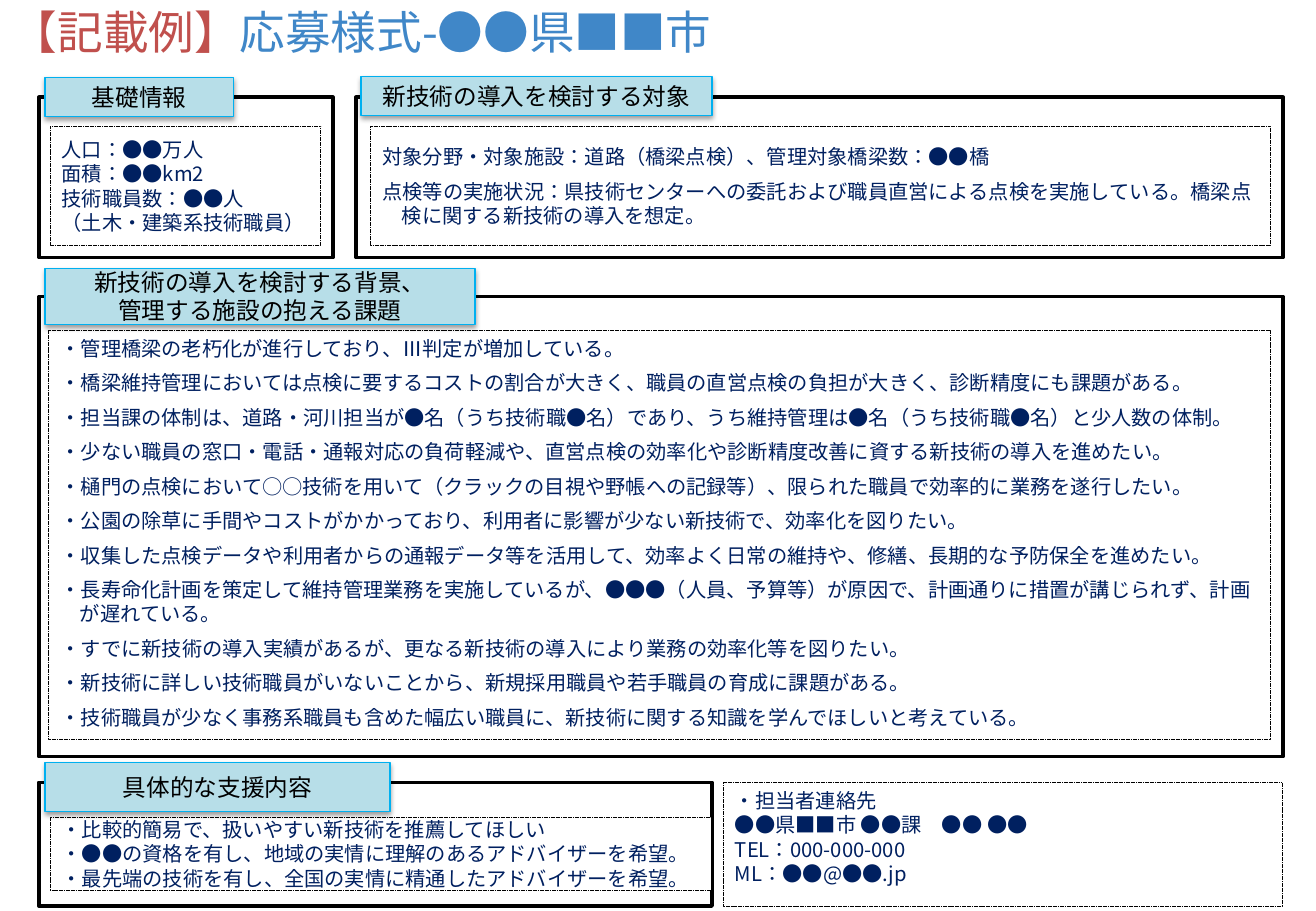
from lxml.etree import SubElement
from pptx import Presentation
from pptx.dml.color import RGBColor
from pptx.enum.dml import MSO_LINE
from pptx.enum.lang import MSO_LANGUAGE_ID as LANG
from pptx.enum.shapes import MSO_SHAPE as SHAPE
from pptx.enum.text import MSO_ANCHOR as ANCHOR, PP_ALIGN as ALIGN
from pptx.oxml.ns import qn
from pptx.util import Emu, Pt

PX = 9144  # EMU per px, 100 px to the inch
FONT = "Noto Sans CJK JP"
COLORS = {
    "black": "000000", "white": "FFFFFF", "tab": "B7DEE8", "tab_line": "00B0F0",
    "navy": "002060", "red": "C0504D", "blue": "4087C8",
}

BASICS = ["人口：●●万人", "面積：●●km2", "技術職員数：●●人", "（土木・建築系技術職員）"]
TARGETS = [
    "対象分野・対象施設：道路（橋梁点検）、管理対象橋梁数：●●橋",
    "点検等の実施状況：県技術センターへの委託および職員直営による点検を実施している。"
    "橋梁点検に関する新技術の導入を想定。",
]
ISSUES = [
    "・管理橋梁の老朽化が進行しており、Ⅲ判定が増加している。",
    "・橋梁維持管理においては点検に要するコストの割合が大きく、職員の直営点検の負担が大きく、診断精度にも課題がある。",
    "・担当課の体制は、道路・河川担当が●名（うち技術職●名）であり、うち維持管理は●名（うち技術職●名）と少人数の体制。",
    "・少ない職員の窓口・電話・通報対応の負荷軽減や、直営点検の効率化や診断精度改善に資する新技術の導入を進めたい。",
    "・樋門の点検において○○技術を用いて（クラックの目視や野帳への記録等）、限られた職員で効率的に業務を遂行したい。",
    "・公園の除草に手間やコストがかかっており、利用者に影響が少ない新技術で、効率化を図りたい。",
    "・収集した点検データや利用者からの通報データ等を活用して、効率よく日常の維持や、修繕、長期的な予防保全を進めたい。",
    "・長寿命化計画を策定して維持管理業務を実施しているが、●●●（人員、予算等）が原因で、"
    "計画通りに措置が講じられず、計画が遅れている。",
    "・すでに新技術の導入実績があるが、更なる新技術の導入により業務の効率化等を図りたい。",
    "・新技術に詳しい技術職員がいないことから、新規採用職員や若手職員の育成に課題がある。",
    "・技術職員が少なく事務系職員も含めた幅広い職員に、新技術に関する知識を学んでほしいと考えている。",
]
SUPPORT = [
    "・比較的簡易で、扱いやすい新技術を推薦してほしい",
    "・●●の資格を有し、地域の実情に理解のあるアドバイザーを希望。",
    "・最先端の技術を有し、全国の実情に精通したアドバイザーを希望。",
]
CONTACT = ["・担当者連絡先", "●●県■■市 ●●課　●● ●●", "TEL：000-000-000", "ML：●●@●●.jp"]


def px(n):
    return Emu(n * PX)


def rgb(name):
    return RGBColor.from_string(COLORS[name])


def add_run(p, text, size=12, color="navy"):
    r = p.add_run()
    r.text = text
    r.font.size = Pt(size)
    r.font.name = FONT
    r.font.color.rgb = rgb(color)
    r.font.language_id = LANG.JAPANESE
    SubElement(r.font._element, qn("a:ea")).set("typeface", FONT)


def write(sp, lines, align=ALIGN.LEFT, anchor=ANCHOR.MIDDLE, hang=0, before=0, **fmt):
    tf = sp.text_frame
    tf.word_wrap = True
    tf.vertical_anchor = anchor
    for i, line in enumerate(lines):
        p = tf.add_paragraph() if i else tf.paragraphs[0]
        p.alignment = align
        if i and before:
            p.space_before = Pt(before)
        if hang:
            pPr = p._p.get_or_add_pPr()
            pPr.set("marL", str(px(hang)))
            pPr.set("indent", str(-px(hang)))
        add_run(p, line, **fmt)


def add_rect(slide, box, line, width, fill=None):
    sp = slide.shapes.add_shape(SHAPE.RECTANGLE, *map(px, box))
    sp.shadow.inherit = False
    if fill:
        sp.fill.solid()
        sp.fill.fore_color.rgb = rgb(fill)
    else:
        sp.fill.background()
    sp.line.color.rgb = rgb(line)
    sp.line.width = Pt(width)
    return sp


def add_shadow(sp):
    effects = sp._element.spPr.find(qn("a:effectLst"))
    shadow = SubElement(effects, qn("a:outerShdw"), blurRad=str(Pt(3.1)),
                        dist=str(Pt(1.6)), dir="5400000", rotWithShape="0")
    color = SubElement(shadow, qn("a:srgbClr"), val=COLORS["black"])
    SubElement(color, qn("a:alpha"), val="38000")


def add_frame(slide, box):
    add_rect(slide, box, "black", 2)


def add_note(slide, box, lines, **fmt):
    sp = add_rect(slide, box, "black", 0.25, "white")
    sp.line.dash_style = MSO_LINE.SQUARE_DOT
    write(sp, lines, hang=16, **fmt)


def add_tab(slide, box, lines):
    sp = add_rect(slide, box, "tab_line", 0.75, "tab")
    add_shadow(sp)
    write(sp, lines, align=ALIGN.CENTER, size=14, color="black")


def add_title(slide, box, parts):
    sp = slide.shapes.add_textbox(*map(px, box))
    sp.text_frame.word_wrap = True
    sp.text_frame.vertical_anchor = ANCHOR.MIDDLE
    for text, color in parts:
        add_run(sp.text_frame.paragraphs[0], text, size=27, color=color)


def main():
    prs = Presentation()
    prs.slide_width, prs.slide_height = px(1083), px(750)
    slide = prs.slides.add_slide(prs.slide_layouts[6])

    add_title(slide, (0, 0, 832, 52), [("【記載例】", "red"), ("応募様式-●●県■■市", "blue")])

    # Background and issues
    add_frame(slide, (32, 244, 1024, 379))
    add_note(slide, (40, 272, 1005, 337), ISSUES, anchor=ANCHOR.TOP, before=6)
    add_tab(slide, (37, 221, 354, 46), ["新技術の導入を検討する背景、", "管理する施設の抱える課題"])

    # Basic information
    add_frame(slide, (32, 80, 242, 132))
    add_note(slide, (41, 104, 223, 98), BASICS)
    add_tab(slide, (37, 64, 155, 32), ["基礎情報"])

    # Target of the new technology
    add_frame(slide, (293, 80, 763, 132))
    add_note(slide, (305, 104, 740, 98), TARGETS, before=6)
    add_tab(slide, (297, 63, 289, 32), ["新技術の導入を検討する対象"])

    # Requested support
    add_frame(slide, (32, 644, 554, 102))
    add_note(slide, (41, 673, 544, 60), SUPPORT)
    add_tab(slide, (37, 628, 284, 40), ["具体的な支援内容"])

    # Contact
    add_note(slide, (595, 644, 460, 102), CONTACT, anchor=ANCHOR.TOP)

    prs.save("out.pptx")


if __name__ == "__main__":
    main()
